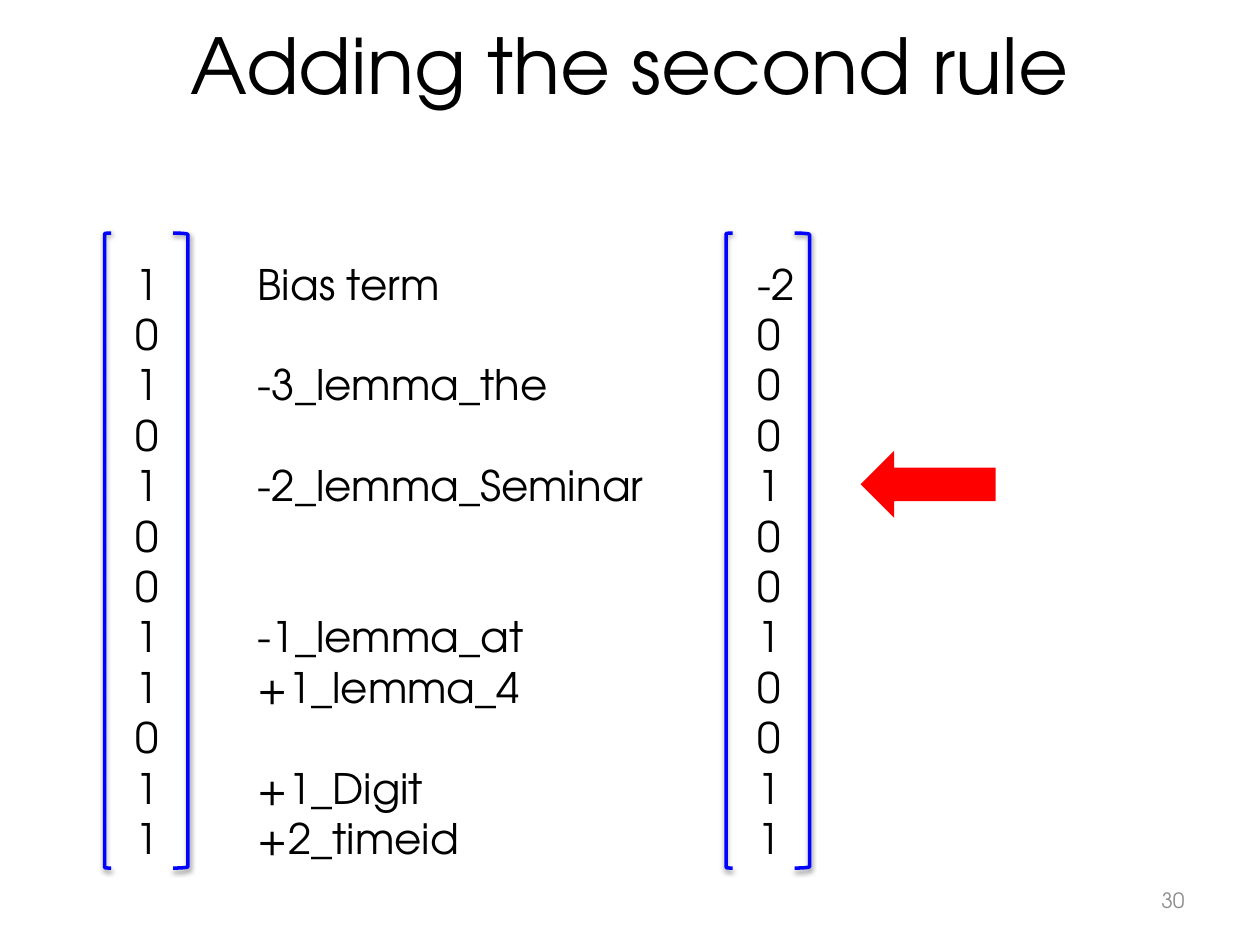
from lxml import etree
from pptx import Presentation
from pptx.dml.color import RGBColor
from pptx.enum import shapes, text
from pptx.oxml import parse_xml
from pptx.oxml.ns import nsdecls
from pptx.util import Cm, Pt

FONT = "TeX Gyre Adventor"
ROW_PITCH = 28.8  # points from one line to the next
SHADOW = (
    f'<a:effectLst {nsdecls("a")}>'
    '<a:outerShdw blurRad="39370" dist="20320" dir="5400000" rotWithShape="0">'
    '<a:srgbClr val="000000"><a:alpha val="38000"/></a:srgbClr>'
    "</a:outerShdw></a:effectLst>"
)


def color(hex_string):
    return RGBColor.from_string(hex_string)


def write_lines(frame, lines, size, ink="000000", align=text.PP_ALIGN.LEFT):
    """Write one paragraph per line; an empty line becomes space before the next."""
    skipped = 0
    paragraph = frame.paragraphs[0]
    for line in lines:
        if not line:
            skipped += 1
            continue
        if paragraph.text:
            paragraph = frame.add_paragraph()
        paragraph.text = line
        paragraph.alignment = align
        paragraph.space_before = Pt(skipped * ROW_PITCH)
        paragraph.font.name = FONT
        paragraph.font.size = Pt(size)
        paragraph.font.color.rgb = color(ink)
        skipped = 0


prs = Presentation()
prs.slide_width, prs.slide_height = Cm(25.4), Cm(19.05)
slide = prs.slides.add_slide(prs.slide_layouts[5])

title = slide.shapes.title
title.left, title.top, title.width, title.height = Cm(1.27), Cm(0), Cm(22.86), Cm(2.57)
title.text_frame.vertical_anchor = text.MSO_ANCHOR.MIDDLE
write_lines(title.text_frame, ["Adding the second rule"], 44, align=text.PP_ALIGN.CENTER)

page_number = slide.shapes.add_textbox(Cm(18.2), Cm(17.65), Cm(5.93), Cm(1.01)).text_frame
page_number.word_wrap = True
page_number.vertical_anchor = text.MSO_ANCHOR.MIDDLE
write_lines(page_number, ["30"], 12, "8C8C8C", text.PP_ALIGN.RIGHT)

# Feature vector and weight vector: left edge, width of the numbers, entries
vectors = [
    (2.11, 0.99, "1 0 1 0 1 0 0 1 1 0 1 1"),
    (14.64, 1.27, "-2 0 0 0 1 0 0 1 0 0 1 1"),
]
brackets = [
    (shapes.MSO_SHAPE.LEFT_BRACKET, 0, 0.13),
    (shapes.MSO_SHAPE.RIGHT_BRACKET, 1.38, 0.3),
]
for left, width, entries in vectors:
    for kind, offset, depth in brackets:
        bracket = slide.shapes.add_shape(kind, Cm(left + offset), Cm(4.7), Cm(depth), Cm(12.8))
        bracket.fill.background()
        bracket.line.color.rgb = color("0001FF")
        bracket.line.width = Pt(2)
        bracket._element.spPr.append(parse_xml(SHADOW))
    numbers = slide.shapes.add_textbox(Cm(left + 0.38), Cm(5.08), Cm(width), Cm(12.57)).text_frame
    numbers.word_wrap = False
    numbers.auto_size = text.MSO_AUTO_SIZE.SHAPE_TO_FIT_TEXT
    write_lines(numbers, entries.split(), 24)

features = slide.shapes.add_textbox(Cm(4.95), Cm(5.08), Cm(8.53), Cm(12.57)).text_frame
features.word_wrap = True
write_lines(features, [
    "Bias term", "", "-3_lemma_the", "", "-2_lemma_Seminar", "", "",
    "-1_lemma_at", "+1_lemma_4", "", "+1_Digit", "+2_timeid",
], 24)

rule_arrow = slide.shapes.add_shape(
    shapes.MSO_SHAPE.LEFT_ARROW, Cm(17.35), Cm(9.09), Cm(2.72), Cm(1.35))
rule_arrow.shadow.inherit = False
rule_arrow.fill.solid()
rule_arrow.fill.fore_color.rgb = color("FF0000")
rule_arrow.line.fill.background()

prs.save("out.pptx")
